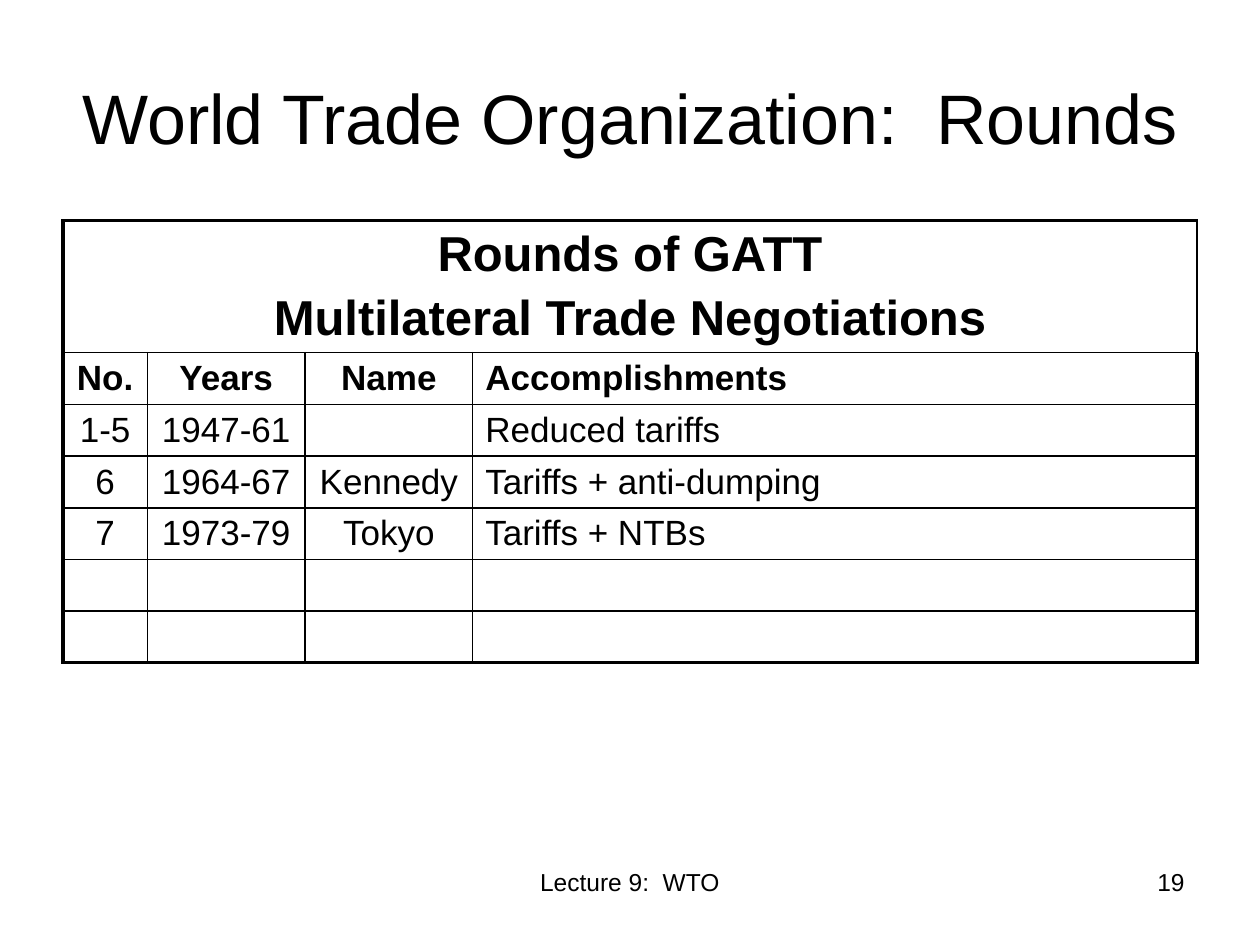
from dataclasses import dataclass

from lxml.etree import SubElement
from pptx import Presentation
from pptx.dml.color import RGBColor
from pptx.enum.text import MSO_ANCHOR, MSO_AUTO_SIZE, PP_ALIGN as Align
from pptx.oxml.ns import qn
from pptx.util import Cm, Pt


@dataclass(frozen=True)
class Theme:
    font: str = "Arial"
    ink: str = "000000"
    title: int = 40
    caption: int = 28
    body: int = 20
    footer: int = 14
    outer_line: float = 2.25
    inner_line: float = 1


class SlideBuilder:
    def __init__(self, prs, theme):
        self.theme = theme
        self.slide = prs.slides.add_slide(prs.slide_layouts[5])

    def add_text(self, p, text, size, align, bold=False):
        p.alignment = align
        r = p.add_run()
        r.text = text
        font = r.font
        font.name, font.size, font.bold = self.theme.font, Pt(size), bold
        font.color.rgb = RGBColor.from_string(self.theme.ink)

    def title(self, text, left, top, width, height):
        sp = self.slide.shapes.title
        sp.left, sp.top, sp.width, sp.height = map(Cm, (left, top, width, height))
        tf = sp.text_frame
        tf.auto_size = MSO_AUTO_SIZE.NONE
        tf.vertical_anchor = MSO_ANCHOR.MIDDLE
        self.add_text(tf.paragraphs[0], text, self.theme.title, Align.CENTER)

    def footer(self, text, left, top, width, height, align):
        box = self.slide.shapes.add_textbox(*map(Cm, (left, top, width, height)))
        tf = box.text_frame
        tf.word_wrap = True
        self.add_text(tf.paragraphs[0], text, self.theme.footer, align)

    def cell_text(self, cell, lines, size, align, bold):
        tf = cell.text_frame
        for i, line in enumerate(lines):
            p = tf.add_paragraph() if i else tf.paragraphs[0]
            self.add_text(p, line, size, align, bold)
            # Space before is 20% of the type size
            p.space_before = Pt(0)
            before = p._p.pPr.find(qn("a:spcBef"))
            before.remove(before[0])
            SubElement(before, qn("a:spcPct"), val="20000")

    def cell_borders(self, cell, outer_sides):
        tc_pr = cell._tc.get_or_add_tcPr()
        for side in "LRTB":
            width = self.theme.outer_line if side in outer_sides else self.theme.inner_line
            ln = SubElement(tc_pr, qn(f"a:ln{side}"), w=str(Pt(width)))
            fill = SubElement(ln, qn("a:solidFill"))
            SubElement(fill, qn("a:srgbClr"), val=self.theme.ink)
        cell.fill.background()

    def table(self, caption, rows, left, top, col_widths, caption_height, row_height):
        n_rows, n_cols = len(rows) + 1, len(col_widths)
        heights = [caption_height] + [row_height] * len(rows)
        table = self.slide.shapes.add_table(
            n_rows, n_cols, Cm(left), Cm(top), Cm(sum(col_widths)), Cm(sum(heights))).table
        table.first_row = table.horz_banding = False
        for col, width in zip(table.columns, col_widths):
            col.width = Cm(width)
        for row, height in zip(table.rows, heights):
            row.height = Cm(height)

        # Frame: heavy outside, thin inside
        for i in range(n_rows):
            for j in range(n_cols):
                edges = {"T": i == 0, "B": i == n_rows - 1, "L": j == 0, "R": j == n_cols - 1}
                self.cell_borders(table.cell(i, j), [s for s, on in edges.items() if on])

        # Caption across all columns
        head = table.cell(0, 0)
        head.merge(table.cell(0, n_cols - 1))
        self.cell_text(head, caption, self.theme.caption, Align.CENTER, True)

        # Column heads are bold, the last column is left-aligned
        for i, row in enumerate(rows, 1):
            for j, text in enumerate(row):
                if text:
                    align = Align.LEFT if j == n_cols - 1 else Align.CENTER
                    self.cell_text(table.cell(i, j), [text], self.theme.body, align, i == 1)


CAPTION = ["Rounds of GATT", "Multilateral Trade Negotiations"]
ROUNDS = [
    ("No.", "Years", "Name", "Accomplishments"),
    ("1-5", "1947-61", "", "Reduced tariffs"),
    ("6", "1964-67", "Kennedy", "Tariffs + anti-dumping"),
    ("7", "1973-79", "Tokyo", "Tariffs + NTBs"),
    (),
    (),
]


def main():
    prs = Presentation()
    prs.slide_width, prs.slide_height = Cm(25.4), Cm(19.05)
    s = SlideBuilder(prs, Theme())

    # Title
    s.title("World Trade Organization:  Rounds", 1.27, 0.76, 22.86, 3.18)

    # Negotiation rounds
    s.table(CAPTION, ROUNDS, 1.27, 4.45, (1.7, 3.18, 3.38, 14.6), 2.66, 1.04)

    # Footer and slide number
    s.footer("Lecture 9:  WTO", 8.68, 17.35, 8.04, 1.32, Align.CENTER)
    s.footer("19", 18.2, 17.35, 5.93, 1.32, Align.RIGHT)

    prs.save("out.pptx")


if __name__ == "__main__":
    main()
